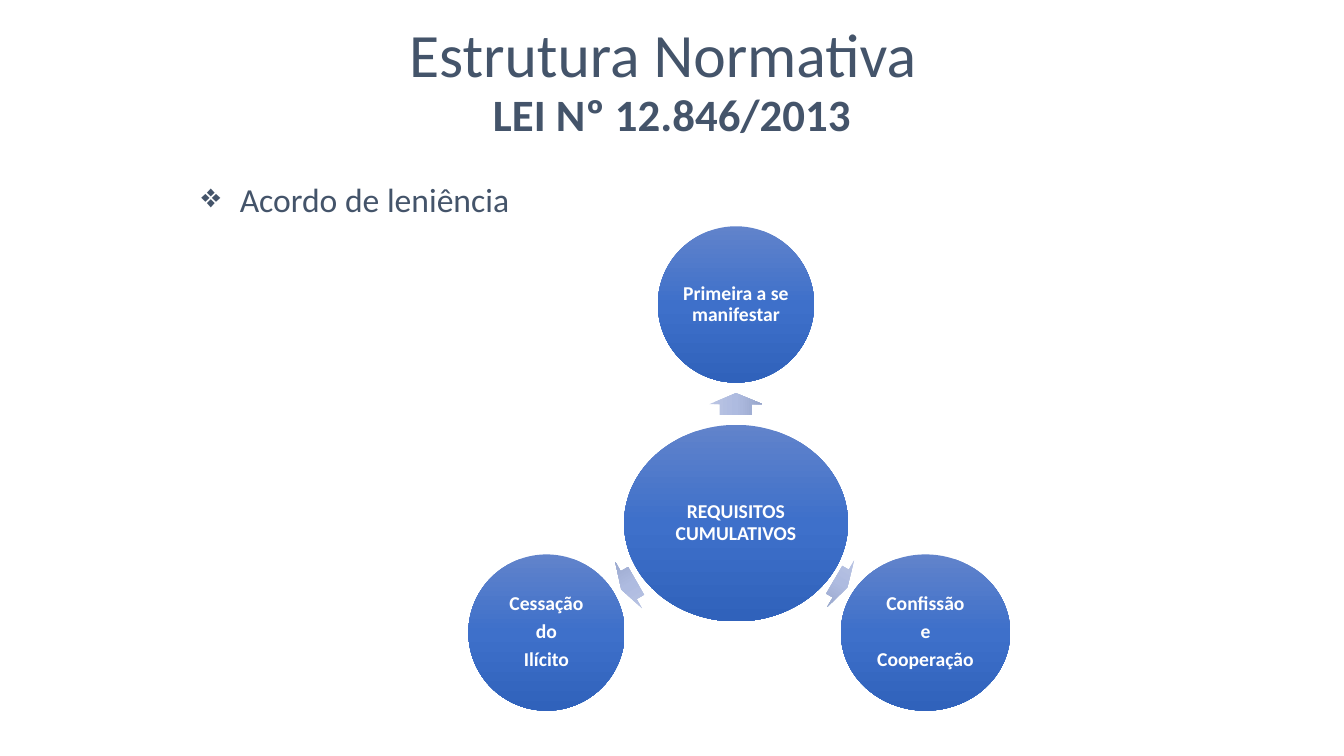
import copy
import math

import pptx
import pptx.dml.color
import pptx.enum.shapes
import pptx.enum.text
import pptx.oxml.ns
import pptx.util
from pptx.util import Inches

RGB = pptx.dml.color.RGBColor
SHAPES = pptx.enum.shapes.MSO_SHAPE
ANCHOR = pptx.enum.text.MSO_ANCHOR
ALIGN = pptx.enum.text.PP_ALIGN
qn = pptx.oxml.ns.qn

SLATE = RGB(0x44, 0x54, 0x6A)
WHITE = RGB(0xFF, 0xFF, 0xFF)
CIRCLE_BLUES = [RGB(0x61, 0x83, 0xCB), RGB(0x3E, 0x70, 0xCA), RGB(0x30, 0x62, 0xBB)]
ARROW_BLUES = [RGB(0xBB, 0xC5, 0xE3), RGB(0xAE, 0xBB, 0xE0), RGB(0x97, 0xA5, 0xCA)]

# text, box (left, top, width, height), anchor, alignment, font
HEADINGS = [
    ("Estrutura Normativa", (1.97, 0.11, 9.21, 0.78), ANCHOR.TOP, ALIGN.CENTER,
     {"size": pptx.util.Pt(44)}),
    ("LEI Nº 12.846/2013", (2.49, 0.81, 8.35, 0.63), ANCHOR.MIDDLE, ALIGN.CENTER,
     {"size": pptx.util.Pt(32), "bold": True}),
]
TOPIC = ("Acordo de leniência", (1.9, 1.73, 9, 5.11), ANCHOR.TOP, ALIGN.LEFT,
         {"size": pptx.util.Pt(24)})
TOPIC_INDENT = 0.38

HUB = (["REQUISITOS CUMULATIVOS"], 2.22, 1.95)
HUB_CENTER = (7.3, 5.19)
SPOKE = 2.17
# lines, circle width, direction in degrees, arrow length, arrow distance from hub
REQUIREMENTS = [
    (["Primeira a se manifestar"], 1.55, 270, 0.22, 1.18),
    (["Confissão", "e", "Cooperação"], 1.68, 30, 0.15, 1.2),
    (["Cessação", "do", "Ilícito"], 1.55, 150, 0.17, 1.23),
]
CIRCLE_HEIGHT = 1.55
ARROW_HEIGHT = 0.53
CIRCLE_FONT = {"size": pptx.util.Pt(14), "bold": True, "color": WHITE}


def set_font(paragraph, size, bold=False, color=SLATE):
    for name, value in {"name": "Calibri", "size": size, "bold": bold}.items():
        setattr(paragraph.font, name, value)
    paragraph.font.color.rgb = color


def add_heading(slide, text, box, anchor, alignment, font, bullet=None):
    frame = slide.shapes.add_textbox(*map(Inches, box)).text_frame
    frame.word_wrap = True
    frame.vertical_anchor = anchor
    paragraph = frame.paragraphs[0]
    paragraph.text = text
    paragraph.alignment = alignment
    if bullet:
        properties = paragraph._p.get_or_add_pPr()
        properties.set("marL", str(Inches(TOPIC_INDENT)))
        properties.set("indent", str(-Inches(TOPIC_INDENT)))
        mark = properties.makeelement(qn("a:buChar"), {"char": bullet})
        properties.append(mark)
    set_font(paragraph, **font)


def add_shaded(slide, kind, center, width, height, colors):
    """Add a centred shape with an even top-to-bottom gradient."""
    x, y = center
    shape = slide.shapes.add_shape(
        kind, *map(Inches, (x - width / 2, y - height / 2, width, height)))
    shape.shadow.inherit = False
    shape.line.fill.background()
    shape.fill.gradient()
    shape.fill.gradient_angle = 270
    stop_list = shape._element.spPr.find(".//" + qn("a:gsLst"))
    stop_list.insert(1, copy.deepcopy(stop_list[0]))
    for index, (stop, color) in enumerate(zip(shape.fill.gradient_stops, colors)):
        stop.position = index / (len(colors) - 1)
        stop.color.rgb = color
    return shape


def add_circle(slide, lines, center, width, height):
    circle = add_shaded(slide, SHAPES.OVAL, center, width, height, CIRCLE_BLUES)
    frame = circle.text_frame
    frame.word_wrap = True
    frame.vertical_anchor = ANCHOR.MIDDLE
    for side in ("left", "top", "right", "bottom"):
        setattr(frame, f"margin_{side}", Inches(0.02))
    frame.text = "\n".join(lines)
    for paragraph in frame.paragraphs:
        paragraph.alignment = ALIGN.CENTER
        paragraph.line_spacing = 0.9
        paragraph.space_after = pptx.util.Pt(4.9)
        set_font(paragraph, **CIRCLE_FONT)


def from_hub(direction, distance):
    angle = math.radians(direction)
    return (HUB_CENTER[0] + distance * math.cos(angle),
            HUB_CENTER[1] + distance * math.sin(angle))


def main():
    deck = pptx.Presentation()
    deck.slide_width, deck.slide_height = Inches(13.33), Inches(7.5)
    slide = deck.slides.add_slide(deck.slide_layouts[6])

    for heading in HEADINGS:
        add_heading(slide, *heading)
    add_heading(slide, *TOPIC, bullet="❖")

    hub_lines, hub_width, hub_height = HUB
    add_circle(slide, hub_lines, HUB_CENTER, hub_width, hub_height)
    for lines, width, direction, arrow_length, arrow_distance in REQUIREMENTS:
        arrow = add_shaded(slide, SHAPES.RIGHT_ARROW, from_hub(direction, arrow_distance),
                           arrow_length, ARROW_HEIGHT, ARROW_BLUES)
        arrow.adjustments[0] = 0.6
        arrow.adjustments[1] = 0.5
        arrow.rotation = direction
        add_circle(slide, lines, from_hub(direction, SPOKE), width, CIRCLE_HEIGHT)

    deck.save("out.pptx")


if __name__ == "__main__":
    main()
